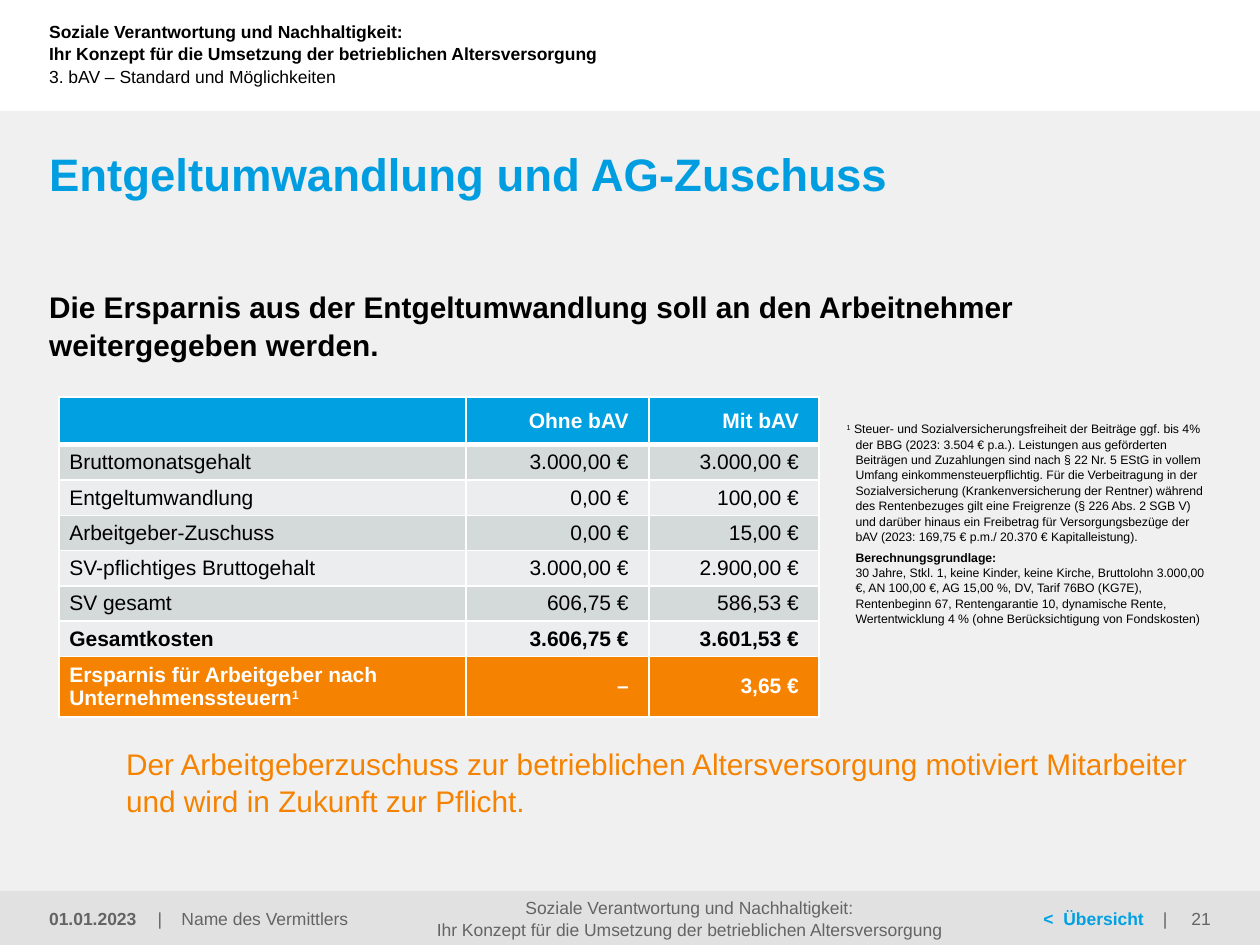
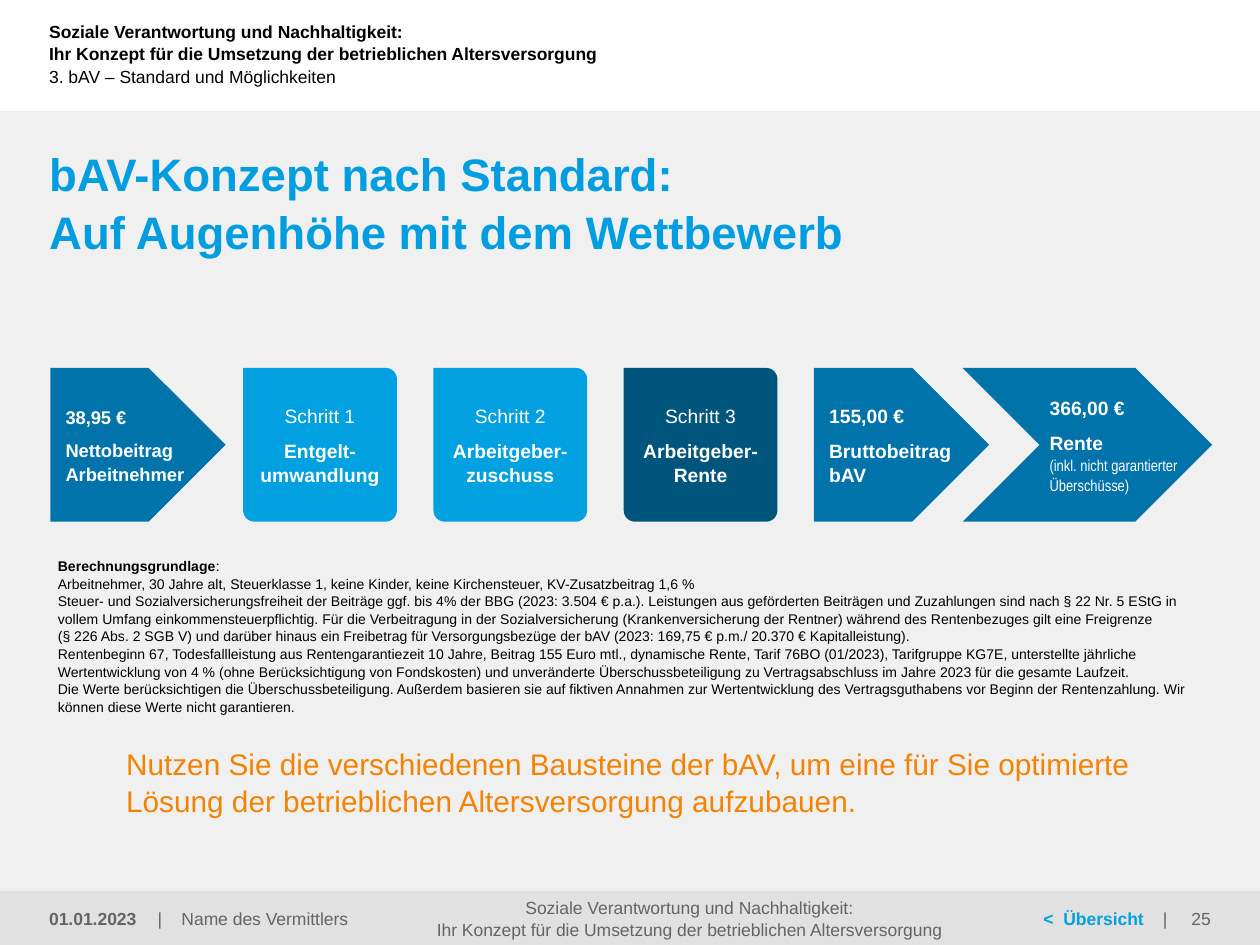
from copy import deepcopy
from math import cos, radians, sin

from lxml import etree
from pptx import Presentation
from pptx.dml.color import RGBColor
from pptx.enum.shapes import MSO_SHAPE
from pptx.enum.text import MSO_ANCHOR, PP_ALIGN
from pptx.oxml.ns import qn
from pptx.util import Inches, Pt

LEFT, CENTER, RIGHT = PP_ALIGN.LEFT, PP_ALIGN.CENTER, PP_ALIGN.RIGHT
TOP, MIDDLE = MSO_ANCHOR.TOP, MSO_ANCHOR.MIDDLE
RECTANGLE, PENTAGON, CHEVRON = MSO_SHAPE.RECTANGLE, MSO_SHAPE.PENTAGON, MSO_SHAPE.CHEVRON

COLORS = {
    "black": "000000", "white": "FFFFFF", "body": "F0F0F0", "footer": "E1E1E1",
    "gray": "646464", "title": "009EE0", "cyan": "00A0E1", "blue": "0073AA",
    "navy": "00557D", "orange": "F58200", "dark_row": "D4D9DA", "light_row": "EBEDEE",
}
MARGIN = 0.39
FOOTER_TOP, FOOTER_HEIGHT = 7.07, 0.43
CAMPAIGN = ("Soziale Verantwortung und Nachhaltigkeit:\n"
            "Ihr Konzept für die Umsetzung der betrieblichen Altersversorgung")


def write(holder, paragraphs, size=10, color="black", bold=False, font="Arial", align=LEFT,
          anchor=TOP, insets=(0, 0, 0, 0), wrap=True, spacing=1.05, before=0, after=0,
          hanging=0, tabs=()):
    """Fill a shape or cell; a paragraph is a string or a list of (text, changes) spans."""
    frame = holder.text_frame
    # Cells carry anchor and margins themselves, shapes carry them on the frame.
    area = frame if hasattr(holder, "shape_type") else holder
    area.vertical_anchor = anchor
    area.margin_left, area.margin_top, area.margin_right, area.margin_bottom = map(Inches, insets)
    if area is frame:
        frame.word_wrap = wrap
    for index, content in enumerate(paragraphs):
        para = frame.add_paragraph() if index else frame.paragraphs[0]
        para.alignment, para.line_spacing = align, spacing
        para.space_before, para.space_after = Pt(before if index else 0), Pt(after)
        properties = para._p.get_or_add_pPr()
        if hanging and not index:
            properties.set("marL", str(Inches(hanging)))
            properties.set("indent", str(-Inches(hanging)))
        if tabs:
            tab_list = etree.SubElement(properties, qn("a:tabLst"))
            for position in tabs:
                etree.SubElement(tab_list, qn("a:tab"), pos=str(Inches(position)), algn="l")
        for text, changes in [(content, {})] if isinstance(content, str) else content:
            for line_number, line in enumerate(text.split("\n")):
                if line_number:
                    para.add_line_break()
                    para._p[-1].append(deepcopy(span._r.rPr))
                span = para.add_run()
                span.text = line
                span.font.name = changes.get("font", font)
                span.font.size = Pt(changes.get("size", size))
                span.font.bold = changes.get("bold", bold)
                span.font.color.rgb = RGBColor.from_string(COLORS[changes.get("color", color)])
                if changes.get("superscript"):
                    span._r.rPr.set("baseline", "30000")


def paint(shape, color):
    shape.shadow.inherit = False
    shape.fill.solid()
    shape.fill.fore_color.rgb = RGBColor.from_string(COLORS[color])
    shape.line.fill.background()


deck = Presentation()
deck.slide_width, deck.slide_height = Inches(10), Inches(7.5)

# Title, claim and page number of each slide
PAGES = [
    ("Entgeltumwandlung und AG-Zuschuss",
     "Der Arbeitgeberzuschuss zur betrieblichen Altersversorgung motiviert Mitarbeiter "
     "und wird in Zukunft zur Pflicht.", "21"),
    ("bAV-Konzept nach Standard:\nAuf Augenhöhe mit dem Wettbewerb",
     "Nutzen Sie die verschiedenen Bausteine der bAV, um eine für Sie optimierte "
     "Lösung der betrieblichen Altersversorgung aufzubauen.", "25"),
]
for title, claim, number in PAGES:
    page = deck.slides.add_slide(deck.slide_layouts[6])
    for top, height, color in [(0.88, 6.62, "body"), (FOOTER_TOP, FOOTER_HEIGHT, "footer")]:
        band = page.shapes.add_shape(RECTANGLE, 0, Inches(top), Inches(10), Inches(height))
        paint(band, color)

    gray = {"color": "gray", "anchor": MIDDLE}
    overview = [("<\tÜbersicht", {"color": "cyan", "bold": True}), ("\t|", {})]
    footer_texts = [
        (MARGIN, 0.83, "01.01.2023", {"bold": True}),
        (1.25, 2.42, "|\tName des Vermittlers", {"tabs": [0.19]}),
        (3.3, 4.34, CAMPAIGN, {"align": CENTER}),
        (8.28, 1.02, overview, {"tabs": [0.16, 0.95]}),
        (9.06, 0.55, number, {"align": RIGHT}),
    ]
    texts = [
        ((MARGIN, 0, 6.59, 0.67), CAMPAIGN, {"bold": True, "anchor": MIDDLE}),
        ((MARGIN, 0.33, 6.76, 0.55), "3. bAV – Standard und Möglichkeiten", {"anchor": MIDDLE}),
        ((MARGIN, 1.14, 9.22, 0.55), title, {"size": 26, "color": "title", "bold": True}),
        ((1, 5.9, 8.61, 0.68), claim,
         {"size": 17, "color": "orange", "anchor": MIDDLE, "insets": (0, 0, 0, 0.08)}),
    ]
    texts += [((left, FOOTER_TOP, width, FOOTER_HEIGHT), text, gray | extra)
              for left, width, text, extra in footer_texts]
    for place, text, style in texts:
        write(page.shapes.add_textbox(*map(Inches, place)), [text], **style)

savings_page, concept_page = deck.slides

# Slide 1: savings table with footnotes
lead = savings_page.shapes.add_textbox(*map(Inches, (MARGIN, 2.28, 9.22, 0.57)))
write(lead, ["Die Ersparnis aus der Entgeltumwandlung soll an den Arbeitnehmer "
             "weitergegeben werden."], size=17, bold=True)

SAVINGS = [
    ("", "Ohne bAV", "Mit bAV"),
    ("Bruttomonatsgehalt", "3.000,00 €", "3.000,00 €"),
    ("Entgeltumwandlung", "0,00 €", "100,00 €"),
    ("Arbeitgeber-Zuschuss", "0,00 €", "15,00 €"),
    ("SV-pflichtiges Bruttogehalt", "3.000,00 €", "2.900,00 €"),
    ("SV gesamt", "606,75 €", "586,53 €"),
    ("Gesamtkosten", "3.606,75 €", "3.601,53 €"),
    ([("Ersparnis für Arbeitgeber nach Unternehmenssteuern", {}), ("1", {"superscript": True})],
     "–", "3,65 €"),
]
COLUMN_WIDTHS = [3.23, 1.45, 1.35]
ROW_HEIGHTS = [0.28] * 7 + [0.45]
LAST = len(SAVINGS) - 1
table = savings_page.shapes.add_table(
    len(SAVINGS), len(COLUMN_WIDTHS), Inches(0.47), Inches(3.15),
    Inches(sum(COLUMN_WIDTHS)), Inches(sum(ROW_HEIGHTS))).table
table.horz_banding = False
for column, width in zip(table.columns, COLUMN_WIDTHS):
    column.width = Inches(width)
for row_number, values in enumerate(SAVINGS):
    table.rows[row_number].height = Inches(ROW_HEIGHTS[row_number])
    banding = "dark_row" if row_number % 2 else "light_row"
    fill = {0: "cyan", LAST: "orange"}.get(row_number, banding)
    for column_number, value in enumerate(values):
        cell = table.cell(row_number, column_number)
        for side in "LRTB":
            thick = (row_number, side) in [(0, "B"), (1, "T")]
            border = etree.SubElement(cell._tc.get_or_add_tcPr(), qn("a:ln" + side),
                                      w=str(Pt(3 if thick else 1)))
            paint_fill = etree.SubElement(border, qn("a:solidFill"))
            etree.SubElement(paint_fill, qn("a:srgbClr"), val=COLORS["white"])
        cell.fill.solid()
        cell.fill.fore_color.rgb = RGBColor.from_string(COLORS[fill])
        write(cell, [value], size=12, spacing=1, anchor=MIDDLE,
              color="white" if row_number in (0, LAST) else "black",
              bold=row_number in (0, LAST - 1, LAST),
              align=RIGHT if column_number else LEFT,
              insets=(0, 0.04, 0.16, 0.04) if column_number else (0.08, 0.04, 0.08, 0.04))
# The empty corner must not stretch the header row.
etree.SubElement(table.cell(0, 0).text_frame.paragraphs[0]._p, qn("a:endParaRPr"), sz="1200")

footnotes = savings_page.shapes.add_textbox(*map(Inches, (6.72, 3.34, 2.89, 1.65)))
write(footnotes, [
    [("1", {"superscript": True}),
     (" Steuer- und Sozialversicherungsfreiheit der Beiträge ggf. bis 4% der BBG (2023: 3.504 € "
      "p.a.). Leistungen aus geförderten Beiträgen und Zuzahlungen sind nach § 22 Nr. 5 EStG in "
      "vollem Umfang einkommensteuerpflichtig. Für die Verbeitragung in der Sozialversicherung "
      "(Krankenversicherung der Rentner) während des Rentenbezuges gilt eine Freigrenze (§ 226 "
      "Abs. 2 SGB V) und darüber hinaus ein Freibetrag für Versorgungsbezüge der bAV (2023: "
      "169,75 € p.m./ 20.370 € Kapitalleistung).", {})],
], size=7, hanging=0.07)
basis = savings_page.shapes.add_textbox(*map(Inches, (6.79, 4.36, 2.82, 0.6)))
write(basis, [
    [("Berechnungsgrundlage:\n", {"bold": True}),
     ("30 Jahre, Stkl. 1, keine Kinder, keine Kirche, Bruttolohn 3.000,00 €, AN 100,00 €, "
      "AG 15,00 %, DV, Tarif 76BO (KG7E), Rentenbeginn 67, Rentengarantie 10, dynamische Rente, "
      "Wertentwicklung 4 % (ohne Berücksichtigung von Fondskosten)", {})],
], size=7)

# Slide 2: process from net contribution to pension
calculation = concept_page.shapes.add_textbox(*map(Inches, (0.46, 4.42, 9.04, 1.21)))
write(calculation, [
    [("Berechnungsgrundlage", {"bold": True}), (":", {})],
    "Arbeitnehmer, 30 Jahre alt, Steuerklasse 1, keine Kinder, keine Kirchensteuer, "
    "KV-Zusatzbeitrag 1,6 %",
    "Steuer- und Sozialversicherungsfreiheit der Beiträge ggf. bis 4% der BBG (2023: 3.504 € "
    "p.a.). Leistungen aus geförderten Beiträgen und Zuzahlungen sind nach § 22 Nr. 5 EStG in "
    "vollem Umfang einkommensteuerpflichtig. Für die Verbeitragung in der Sozialversicherung "
    "(Krankenversicherung der Rentner) während des Rentenbezuges gilt eine Freigrenze",
    "(§ 226 Abs. 2 SGB V) und darüber hinaus ein Freibetrag für Versorgungsbezüge der bAV "
    "(2023: 169,75 € p.m./ 20.370 € Kapitalleistung).",
    "Rentenbeginn 67, Todesfallleistung aus Rentengarantiezeit 10 Jahre, Beitrag 155 Euro mtl., "
    "dynamische Rente, Tarif 76BO (01/2023), Tarifgruppe KG7E, unterstellte jährliche "
    "Wertentwicklung von 4 % (ohne Berücksichtigung von Fondskosten) und unveränderte "
    "Überschussbeteiligung zu Vertragsabschluss im Jahre 2023 für die gesamte Laufzeit.",
    "Die Werte berücksichtigen die Überschussbeteiligung. Außerdem basieren sie auf fiktiven "
    "Annahmen zur Wertentwicklung des Vertragsguthabens vor Beginn der Rentenzahlung. Wir "
    "können diese Werte nicht garantieren.",
], size=8)

PROCESS_TOP, PROCESS_HEIGHT = 2.92, 1.22
STEP_LEFT, STEP_PITCH, RADIUS = 1.93, 1.51, 0.09
STEPS = [("Entgelt-\numwandlung", "cyan"), ("Arbeitgeber-\nzuschuss", "cyan"),
         ("Arbeitgeber-\nRente", "navy")]
for index, (label, color) in enumerate(STEPS):
    left = STEP_LEFT + index * STEP_PITCH
    right, bottom = left + PROCESS_HEIGHT, PROCESS_TOP + PROCESS_HEIGHT
    # Square top-left corner, the other three rounded clockwise
    corners = [(right - RADIUS, PROCESS_TOP + RADIUS, -90),
               (right - RADIUS, bottom - RADIUS, 0),
               (left + RADIUS, bottom - RADIUS, 90)]
    outline = [(Inches(x + RADIUS * cos(radians(start + turn))),
                Inches(y + RADIUS * sin(radians(start + turn))))
               for x, y, start in corners for turn in range(0, 91, 10)]
    builder = concept_page.shapes.build_freeform(Inches(left), Inches(PROCESS_TOP))
    builder.add_line_segments(outline, close=True)
    step = builder.convert_to_shape()
    paint(step, color)
    write(step, [f"Schritt {index + 1}", [(label, {"bold": True})]], size=11, color="white",
          align=CENTER, anchor=MIDDLE, insets=[0.08] * 4, wrap=False, after=6)

pension = [("Rente\n", {}), ("(inkl. nicht garantierter\nÜberschüsse)",
                             {"size": 9, "font": "Arial Narrow", "bold": False})]
ARROWS = [
    (PENTAGON, 0.4, 1.39, 10.5, 0.12, ["38,95 €", "Nettobeitrag\nArbeitnehmer"]),
    (PENTAGON, 6.46, 1.39, 11, 0.12, ["155,00 €", "Bruttobeitrag\nbAV"]),
    (CHEVRON, 7.64, 1.98, 11, 0.08, ["366,00 €", pension]),
]
for kind, left, width, size, inset, lines in ARROWS:
    arrow = concept_page.shapes.add_shape(
        kind, *map(Inches, (left, PROCESS_TOP, width, PROCESS_HEIGHT)))
    paint(arrow, "blue")
    write(arrow, lines, size=size, color="white", bold=True, anchor=MIDDLE,
          insets=(inset, 0.08, 0.08, 0.08), wrap=False, after=6)

deck.save("out.pptx")
